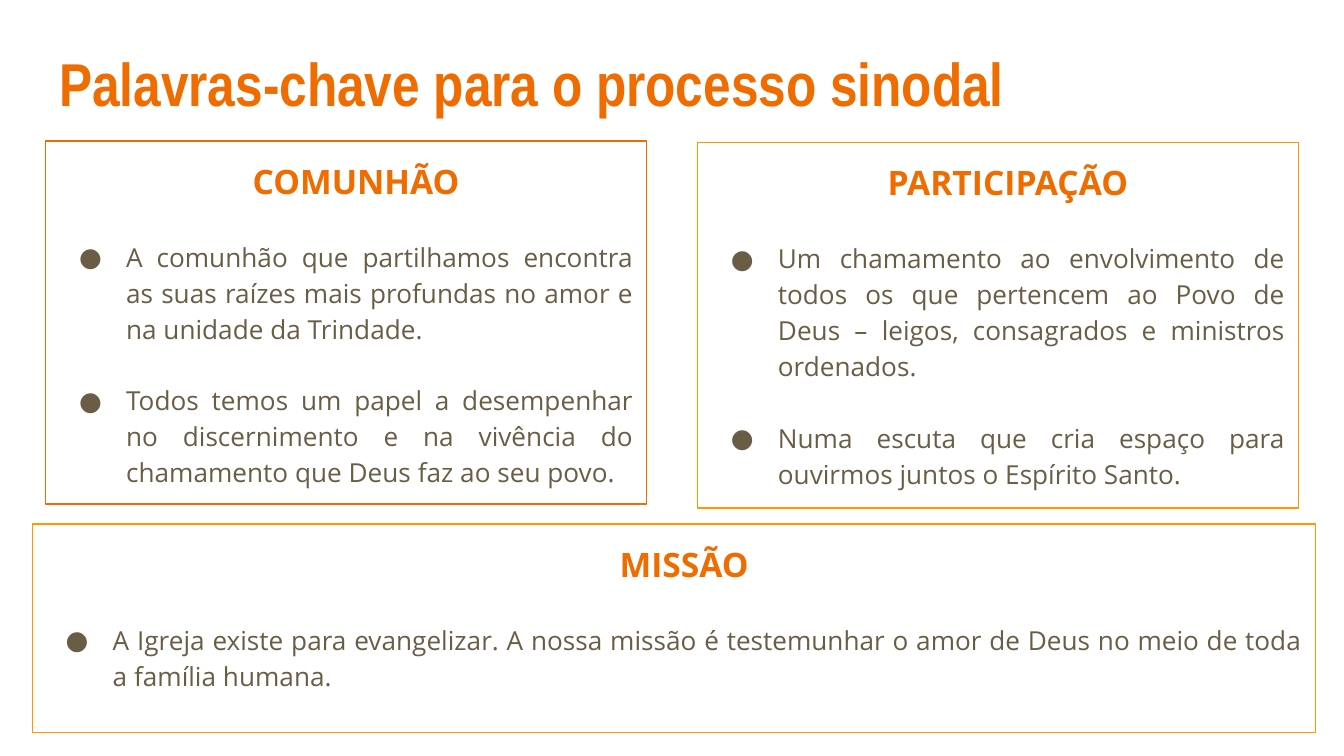
from dataclasses import dataclass

from lxml.etree import SubElement as Sub
from pptx import Presentation
from pptx.dml.color import RGBColor
from pptx.enum.shapes import MSO_SHAPE as Shape
from pptx.enum.text import MSO_ANCHOR as Anchor, MSO_AUTO_SIZE as Fit, PP_ALIGN as Align
from pptx.oxml.ns import qn
from pptx.util import Inches, Pt

ORANGE = RGBColor(0xEF, 0x6C, 0x00)
AMBER = RGBColor(0xFF, 0x98, 0x00)
BROWN = RGBColor(0x69, 0x5D, 0x46)
WIDE = Inches(10)
PAD = Inches(0.1)
GAP = Pt(19)
SANS = "Open Sans"


@dataclass
class Card:
    left: float
    top: float
    width: float
    height: float
    edge: RGBColor
    head: str
    points: list[str]


CARDS = [
    Card(0.34, 1.05, 4.47, 2.7, ORANGE, "COMUNHÃO", [
        "A comunhão que partilhamos encontra as suas raízes mais profundas no amor e na unidade da Trindade.",
        "Todos temos um papel a desempenhar no discernimento e na vivência do chamamento que Deus faz ao seu povo.",
    ]),
    Card(5.19, 1.06, 4.47, 2.72, AMBER, "PARTICIPAÇÃO", [
        "Um chamamento ao envolvimento de todos os que pertencem ao Povo de Deus – leigos, consagrados e ministros ordenados.",
        "Numa escuta que cria espaço para ouvirmos juntos o Espírito Santo.",
    ]),
    Card(0.24, 3.9, 9.55, 1.55, AMBER, "MISSÃO", [
        "A Igreja existe para evangelizar. A nossa missão é testemunhar o amor de Deus no meio de toda a família humana.",
    ]),
]


def set_frame(frame) -> None:
    frame.word_wrap = True
    frame.auto_size = Fit.NONE
    frame.vertical_anchor = Anchor.TOP
    frame.margin_left = frame.margin_right = PAD
    frame.margin_top = frame.margin_bottom = PAD


def style(para, name: str, size: float, color: RGBColor, bold: bool) -> None:
    for run in para.runs:
        font = run.font
        font.name = name
        font.size = Pt(size)
        font.bold = bold
        font.color.rgb = color


def indent(para, left: float, first: float) -> None:
    props = para._p.get_or_add_pPr()
    props.set("marL", str(Inches(left)))
    props.set("indent", str(Inches(first)))


def add_dot(para, color: RGBColor) -> None:
    props = para._p.get_or_add_pPr()
    tint = Sub(props, qn("a:buClr"))
    Sub(tint, qn("a:srgbClr"), val=str(color))
    Sub(props, qn("a:buSzPts"), val="1400")
    Sub(props, qn("a:buFont"), typeface=SANS)
    Sub(props, qn("a:buChar"), char="●")


def add_title(slide, text: str) -> None:
    title = slide.shapes.title
    title.left, title.top = Inches(0.34), Inches(0.24)
    title.width, title.height = Inches(9.32), Inches(0.77)
    frame = title.text_frame
    set_frame(frame)
    frame.text = text
    para = frame.paragraphs[0]
    para.alignment = Align.LEFT
    style(para, "Arial Narrow", 32.4, ORANGE, True)


def add_card(slide, card: Card) -> None:
    box = slide.shapes.add_shape(
        Shape.RECTANGLE, Inches(card.left), Inches(card.top),
        Inches(card.width), Inches(card.height))
    box.shadow.inherit = False
    box.fill.background()
    box.line.color.rgb = card.edge
    box.line.width = Pt(0.75)
    frame = box.text_frame
    set_frame(frame)

    head = frame.paragraphs[0]
    head.text = card.head
    head.alignment = Align.CENTER
    head.line_spacing = 1.15
    indent(head, 0.15, 0)
    style(head, SANS, 18, ORANGE, True)

    for point in card.points:
        para = frame.add_paragraph()
        para.text = point
        para.alignment = Align.JUSTIFY
        para.line_spacing = 1.15
        para.space_before = GAP
        indent(para, 0.5, -0.35)
        add_dot(para, BROWN)
        style(para, SANS, 14, BROWN, False)


def main() -> None:
    deck = Presentation()
    deck.slide_width, deck.slide_height = WIDE, WIDE * 9 // 16
    slide = deck.slides.add_slide(deck.slide_layouts[5])
    add_title(slide, "Palavras-chave para o processo sinodal")
    for card in CARDS:
        add_card(slide, card)
    deck.save("out.pptx")


if __name__ == "__main__":
    main()
